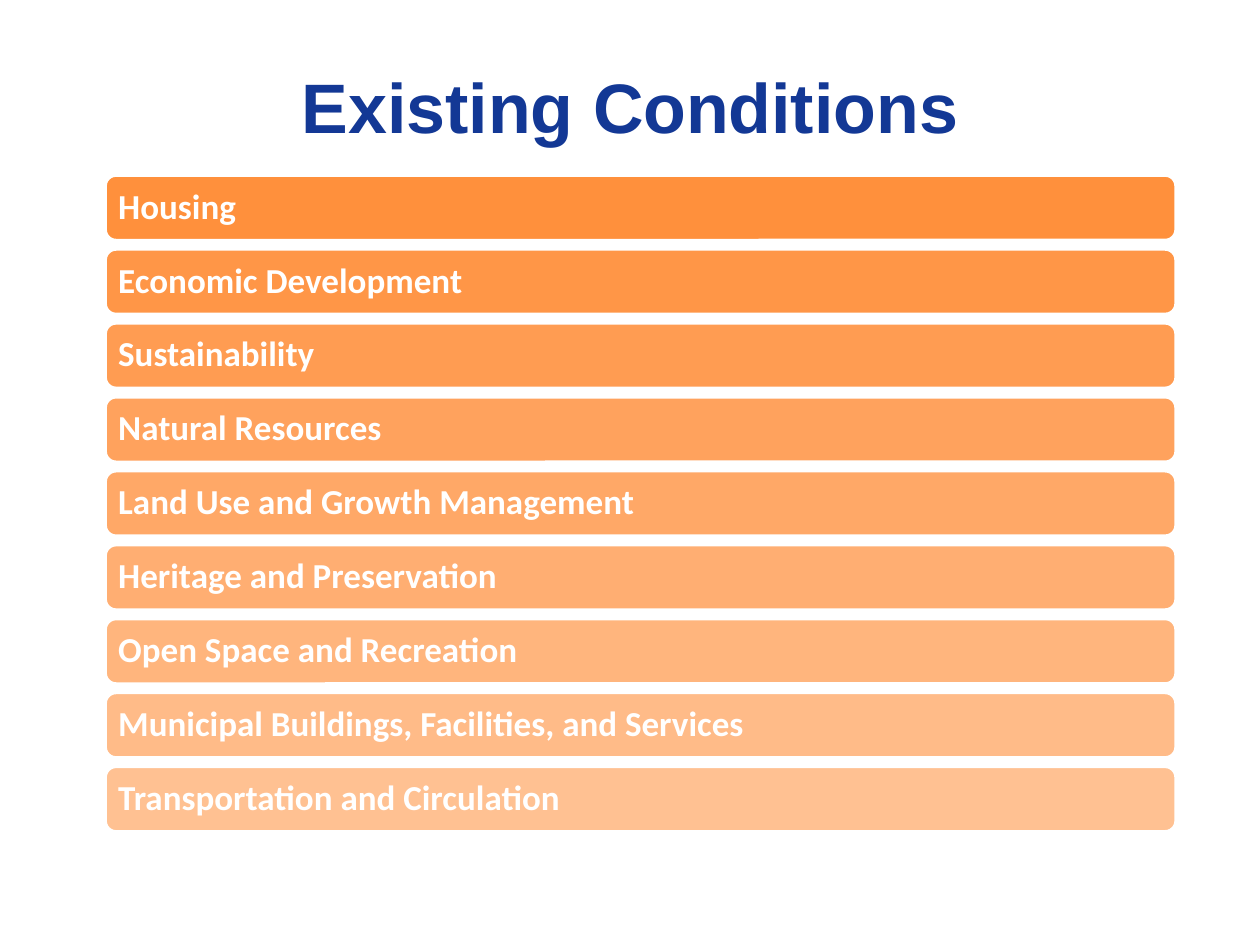
from dataclasses import dataclass

from lxml.etree import SubElement
from pptx import Presentation
from pptx.dml.color import RGBColor
from pptx.enum.shapes import MSO_SHAPE
from pptx.enum.text import MSO_ANCHOR, PP_ALIGN
from pptx.oxml.ns import qn
from pptx.util import Cm, Pt


@dataclass(frozen=True)
class Theme:
    title_color: str = "133895"
    bar_color: str = "FF8427"
    white: str = "FFFFFF"
    title_font: str = "Arial"
    bar_font: str = "Calibri"
    title_size: int = 40
    bar_size: int = 20
    outline: int = 2


TOPICS = [
    "Housing",
    "Economic Development",
    "Sustainability",
    "Natural Resources",
    "Land Use and Growth Management",
    "Heritage and Preservation",
    "Open Space and Recreation",
    "Municipal Buildings, Facilities, and Services",
    "Transportation and Circulation",
]
BAR_TOP, BAR_PITCH = 3.53, 1.49
FIRST_OPACITY, OPACITY_STEP = 90, 5


def write_text(box, text, *, font, size, color, align=PP_ALIGN.LEFT, inset=0.2, spacing=1.0):
    frame = box.text_frame
    frame.word_wrap = True
    frame.vertical_anchor = MSO_ANCHOR.MIDDLE
    frame.margin_left = frame.margin_right = Cm(inset)
    frame.margin_top = frame.margin_bottom = Cm(inset)
    para = frame.paragraphs[0]
    para.alignment = align
    para.line_spacing = spacing
    span = para.add_run()
    span.text = text
    span.font.name = font
    span.font.size = Pt(size)
    span.font.bold = True
    span.font.color.rgb = RGBColor.from_string(color)


class PageBuilder:
    """Hold the theme and the current slide, and add its elements."""

    def __init__(self, page, theme):
        self.page = page
        self.theme = theme

    def title(self, text):
        box = self.page.shapes.add_textbox(Cm(1.27), Cm(0.53), Cm(22.86), Cm(3.18))
        write_text(box, text, font=self.theme.title_font, size=self.theme.title_size,
                   color=self.theme.title_color, align=PP_ALIGN.CENTER)

    def bar(self, text, top, opacity):
        box = self.page.shapes.add_shape(
            MSO_SHAPE.ROUNDED_RECTANGLE, Cm(2.12), Cm(top), Cm(21.59), Cm(1.32))
        box.shadow.inherit = False
        box.fill.solid()
        box.fill.fore_color.rgb = RGBColor.from_string(self.theme.bar_color)
        color = box.fill._xPr.find(f".//{qn('a:srgbClr')}")
        SubElement(color, qn("a:alpha"), val=str(opacity * 1000))
        box.line.color.rgb = RGBColor.from_string(self.theme.white)
        box.line.width = Pt(self.theme.outline)
        write_text(box, text, font=self.theme.bar_font, size=self.theme.bar_size,
                   color=self.theme.white, spacing=0.9)


def main():
    deck = Presentation()
    deck.slide_width, deck.slide_height = Cm(25.4), Cm(19.05)
    builder = PageBuilder(deck.slides.add_slide(deck.slide_layouts[6]), Theme())
    builder.title("Existing Conditions")
    for index, topic in enumerate(TOPICS):
        builder.bar(topic, BAR_TOP + index * BAR_PITCH, FIRST_OPACITY - index * OPACITY_STEP)
    deck.save("out.pptx")


if __name__ == "__main__":
    main()
